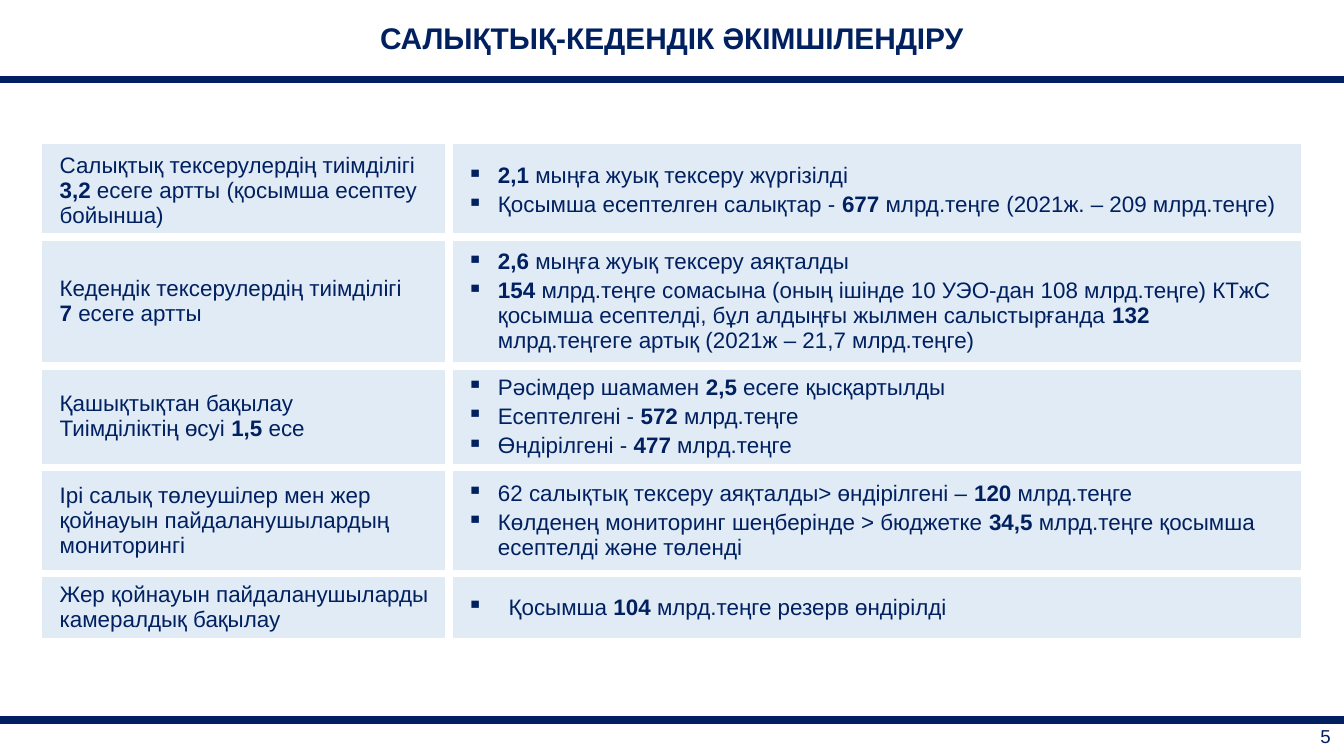
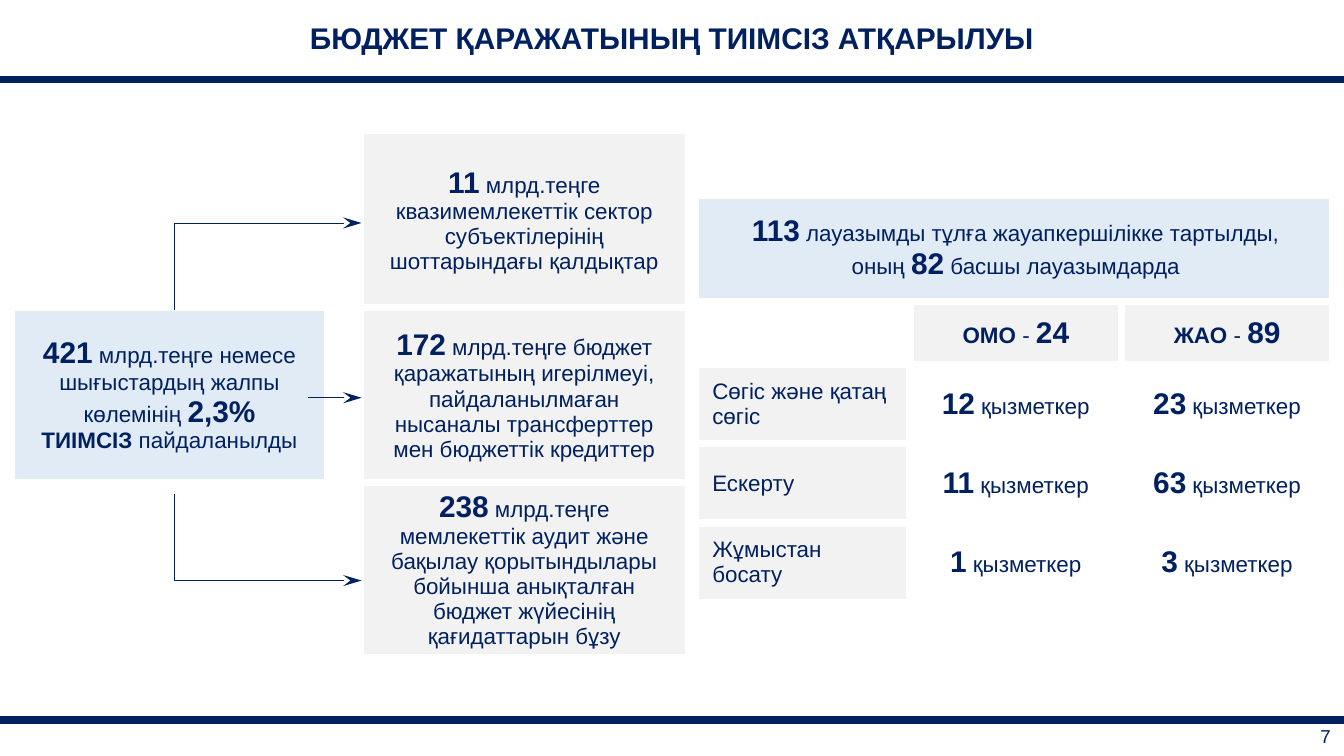
from dataclasses import dataclass
from itertools import product
from typing import NamedTuple, Optional

from lxml.etree import SubElement
from pptx import Presentation
from pptx.dml.color import RGBColor
from pptx.enum.shapes import MSO_CONNECTOR
from pptx.enum.text import MSO_ANCHOR, PP_ALIGN
from pptx.oxml import parse_xml
from pptx.oxml.ns import qn
from pptx.slide import Slide
from pptx.table import Table, _Cell
from pptx.util import Pt


@dataclass(frozen=True)
class Theme:
    navy: str = "002060"
    white: str = "FFFFFF"
    blue: str = "E0EBF6"
    gray: str = "F2F2F2"
    font: str = "Arial"
    big: float = 16
    body: float = 12
    small: float = 10
    rule: float = 4.5
    hair: float = 0.25


THEME = Theme()
NS = "http://schemas.openxmlformats.org/drawingml/2006/main"
PLAIN = "{2D5ABB26-0587-4C30-8999-92F81FD0307C}"
WIDE, HIGH = 720, 405
LEFT, MID, RIGHT = PP_ALIGN.LEFT, PP_ALIGN.CENTER, PP_ALIGN.RIGHT


class Item(NamedTuple):
    text: str = ""
    fill: Optional[str] = None
    align: PP_ALIGN = LEFT
    size: float = THEME.body
    indent: float = 0
    after: float = 0


class Grid(NamedTuple):
    """Place of a table; edges names the outer sides (l, r, t, b) with a line."""
    left: float
    top: float
    cols: list[float]
    rows: list[float]
    edges: str
    color: str = THEME.white
    inset: tuple[float, float] = (7.2, 3.6)
    roof: float = THEME.rule


class Arrow(NamedTuple):
    start: tuple[float, float]
    end: tuple[float, float]
    kind: MSO_CONNECTOR = MSO_CONNECTOR.ELBOW


def write(cell: _Cell, text: str, *, size: float, align: PP_ALIGN,
          indent: float = 0, after: float = 0) -> None:
    """Write paragraphs; *x* is bold, *#x* is bold and big, \\v breaks a line."""
    frame = cell.text_frame
    for num, line in enumerate(text.split("\n")):
        para = frame.add_paragraph() if num else frame.paragraphs[0]
        para.alignment = align
        if indent:
            para.space_after = Pt(after)
            bullet(para._p.get_or_add_pPr(), indent)
        for odd, part in enumerate(line.split("*")):
            bold = odd % 2 == 1
            big = part.startswith("#")
            for row, bit in enumerate(part.removeprefix("#").split("\v")):
                if row:
                    para.add_line_break()
                if not bit:
                    continue
                run = para.add_run()
                run.text = bit
                font = run.font
                font.name, font.bold = THEME.font, bold
                font.size = Pt(THEME.big if big else size)
                font.color.rgb = RGBColor.from_string(THEME.navy)


def bullet(props, indent: float) -> None:
    props.set("marL", str(Pt(indent)))
    props.set("indent", str(-Pt(indent)))
    color = SubElement(props, qn("a:buClr"))
    SubElement(color, qn("a:srgbClr")).set("val", THEME.navy)
    SubElement(props, qn("a:buChar")).set("char", "▪")


def border(cell: _Cell, sides: dict[str, float], color: str) -> None:
    props = cell._tc.get_or_add_tcPr()
    for spot, side in enumerate("lrtb"):
        width = sides.get(side, 0)
        paint = (f'<a:solidFill><a:srgbClr val="{color}"/></a:solidFill>'
                 if width else "<a:noFill/>")
        props.insert(spot, parse_xml(
            f'<a:ln{side.upper()} xmlns:a="{NS}" w="{Pt(width)}">'
            f'{paint}</a:ln{side.upper()}>'))


def sides(grid: Grid, row: int, col: int) -> dict[str, float]:
    outer = {"l": col == 0, "r": col == len(grid.cols) - 1,
             "t": row == 0, "b": row == len(grid.rows) - 1}
    return {side: grid.roof if side == "t" and row == 0 else THEME.rule
            for side, edge in outer.items() if not edge or side in grid.edges}


def add_grid(slide: Slide, grid: Grid, items: list[list[Item]],
             spans: tuple = ()) -> Table:
    """Draw a table; each span is (row, col, last row, last col)."""
    high, wide = len(grid.rows), len(grid.cols)
    table = slide.shapes.add_table(
        high, wide, Pt(grid.left), Pt(grid.top),
        Pt(sum(grid.cols)), Pt(sum(grid.rows))).table
    table.first_row = table.horz_banding = False
    table._tbl.tblPr.find(qn("a:tableStyleId")).text = PLAIN
    for col, size in zip(table.columns, grid.cols):
        col.width = Pt(size)
    for row, size in zip(table.rows, grid.rows):
        row.height = Pt(size)
    for top, left, low, right in spans:
        table.cell(top, left).merge(table.cell(low, right))
    for row, col in product(range(high), range(wide)):
        cell, item = table.cell(row, col), items[row][col]
        cell.vertical_anchor = MSO_ANCHOR.MIDDLE
        cell.margin_left = cell.margin_right = Pt(grid.inset[0])
        cell.margin_top = cell.margin_bottom = Pt(grid.inset[1])
        if item.fill:
            cell.fill.solid()
            cell.fill.fore_color.rgb = RGBColor.from_string(item.fill)
        else:
            cell.fill.background()
        border(cell, sides(grid, row, col), grid.color)
        if item.text:
            write(cell, item.text, size=item.size, align=item.align,
                  indent=item.indent, after=item.after)
    return table


def add_arrow(slide: Slide, arrow: Arrow) -> None:
    ends = [Pt(value) for value in (*arrow.start, *arrow.end)]
    line = slide.shapes.add_connector(arrow.kind, *ends)
    line.line.color.rgb = RGBColor.from_string(THEME.navy)
    line.line.width = Pt(THEME.hair)
    tip = SubElement(line.line._get_or_add_ln(), qn("a:tailEnd"))
    for key, value in (("type", "stealth"), ("w", "med"), ("len", "lg")):
        tip.set(key, value)
    props = line._element.spPr
    SubElement(props, qn("a:effectLst"))
    if arrow.kind == MSO_CONNECTOR.ELBOW:
        bend = SubElement(props.find(qn("a:prstGeom")).find(qn("a:avLst")),
                          qn("a:gd"))
        bend.set("name", "adj1")
        bend.set("fmla", "val -800")


def add_page(deck, title: str, number: int) -> Slide:
    slide = deck.slides.add_slide(deck.slide_layouts[6])
    head = Grid(0, 0, [WIDE], [42.5], "b", THEME.navy)
    foot = Grid(0, 385.8, [WIDE], [17.3], "t", THEME.navy)
    add_grid(slide, head, [[Item(f"*{title}*", align=MID, size=THEME.big)]])
    add_grid(slide, foot, [[Item(str(number), align=RIGHT, size=THEME.small)]])
    return slide


CHECKS = [
    ("Салықтық тексерулердің тиімділігі *3,2* есеге артты (қосымша есептеу "
     "бойынша)",
     "*2,1 *мыңға жуық тексеру жүргізілді\n"
     "Қосымша есептелген салықтар - *677* млрд.теңге (2021ж. – 209 млрд.теңге)"),
    ("Кедендік тексерулердің тиімділігі\n*7* есеге артты",
     "*2,6 *мыңға жуық тексеру аяқталды\n"
     "*154* млрд.теңге сомасына (оның ішінде 10 УЭО-дан 108 млрд.теңге) КТжС "
     "қосымша есептелді, бұл алдыңғы жылмен салыстырғанда *132 *"
     "млрд.теңгеге артық (2021ж – 21,7 млрд.теңге)"),
    ("Қашықтықтан бақылау\vТиімділіктің өсуі *1,5* есе",
     "Рәсімдер шамамен *2,5* есеге қысқартылды\n"
     "Есептелгені - *572* млрд.теңге\nӨндірілгені - *477* млрд.теңге"),
    ("Ірі салық төлеушілер мен жер қойнауын пайдаланушылардың мониторингі",
     "62 салықтық тексеру аяқталды> өндірілгені – *120* млрд.теңге\n"
     "Көлденең мониторинг шеңберінде > бюджетке *34,5 *млрд.теңге қосымша "
     "есептелді және төленді"),
    ("Жер қойнауын пайдаланушыларды камералдық бақылау",
     "Қосымша *104* млрд.теңге резерв өндірілді"),
]

WASTE = ("*#421* млрд.теңге немесе шығыстардың жалпы көлемінің *#2,3%*\n"
         "*ТИІМСІЗ* пайдаланылды")
CAUSES = [
    "*#11* млрд.теңге квазимемлекеттік сектор субъектілерінің шоттарындағы "
    "қалдықтар",
    "*#172* млрд.теңге бюджет қаражатының игерілмеуі, пайдаланылмаған "
    "нысаналы трансферттер мен бюджеттік кредиттер",
    "*#238* млрд.теңге мемлекеттік аудит және бақылау қорытындылары бойынша "
    "анықталған бюджет жүйесінің қағидаттарын бұзу",
]

BLAME = ("*#113* лауазымды тұлға жауапкершілікке тартылды,\n"
         "оның *#82* басшы лауазымдарда")
BODIES = [("ОМО", 24), ("ЖАО", 89)]
STEPS = [("Сөгіс және қатаң сөгіс", 12, 23), ("Ескерту", 11, 63),
         ("Жұмыстан босату", 1, 3)]

ARROWS = [
    Arrow((94, 165.6), (193.7, 119.5)),
    Arrow((94, 265), (193.7, 311)),
    Arrow((164.9, 213.1), (193.7, 213.1), MSO_CONNECTOR.STRAIGHT),
]


def add_checks(deck) -> None:
    slide = add_page(deck, "САЛЫҚТЫҚ-КЕДЕНДІК ӘКІМШІЛЕНДІРУ", 5)
    grid = Grid(22.4, 77, [218.2, 456.5], [44.6, 69.1, 38.2, 56.9, 27.4],
                "b", inset=(9.6, 4.8))
    items = []
    for topic, facts in CHECKS:
        many = "\n" in facts
        items.append([Item(topic, THEME.blue),
                      Item(facts, THEME.blue, indent=16.6 if many else 22.3,
                           after=2.2 if many else 0)])
    add_grid(slide, grid, items)


def add_waste(deck) -> None:
    slide = add_page(deck, "БЮДЖЕТ ҚАРАЖАТЫНЫҢ ТИІМСІЗ АТҚАРЫЛУЫ", 7)
    blank = Item()
    causes = [[blank, blank, Item(text, THEME.gray, MID)] for text in CAUSES]
    causes[1][0] = Item(WASTE, THEME.blue, MID)
    add_grid(slide, Grid(5.8, 71.3, [170, 16.5, 175.7], [93.6] * 3,
                         "lrtb", roof=1), causes, ((0, 1, 2, 1),))

    blame = [[Item(BLAME, THEME.blue, MID), blank, blank],
             [blank, *(Item(f"*{name} *- *#{count}*", THEME.gray, MID)
                       for name, count in BODIES)]]
    for step, *counts in STEPS:
        blame.append([Item(step, THEME.gray),
                      *(Item(f"*#{count}* қызметкер", align=MID)
                        for count in counts)])
    add_grid(slide, Grid(374.4, 104.4, [113.2] * 3, [57, 33.8] + [42.5] * 3,
                         "rtb"), blame, ((0, 0, 0, 2),))
    for arrow in ARROWS:
        add_arrow(slide, arrow)


def main() -> None:
    deck = Presentation()
    deck.slide_width, deck.slide_height = Pt(WIDE), Pt(HIGH)
    add_checks(deck)
    add_waste(deck)
    deck.save("out.pptx")


if __name__ == "__main__":
    main()
